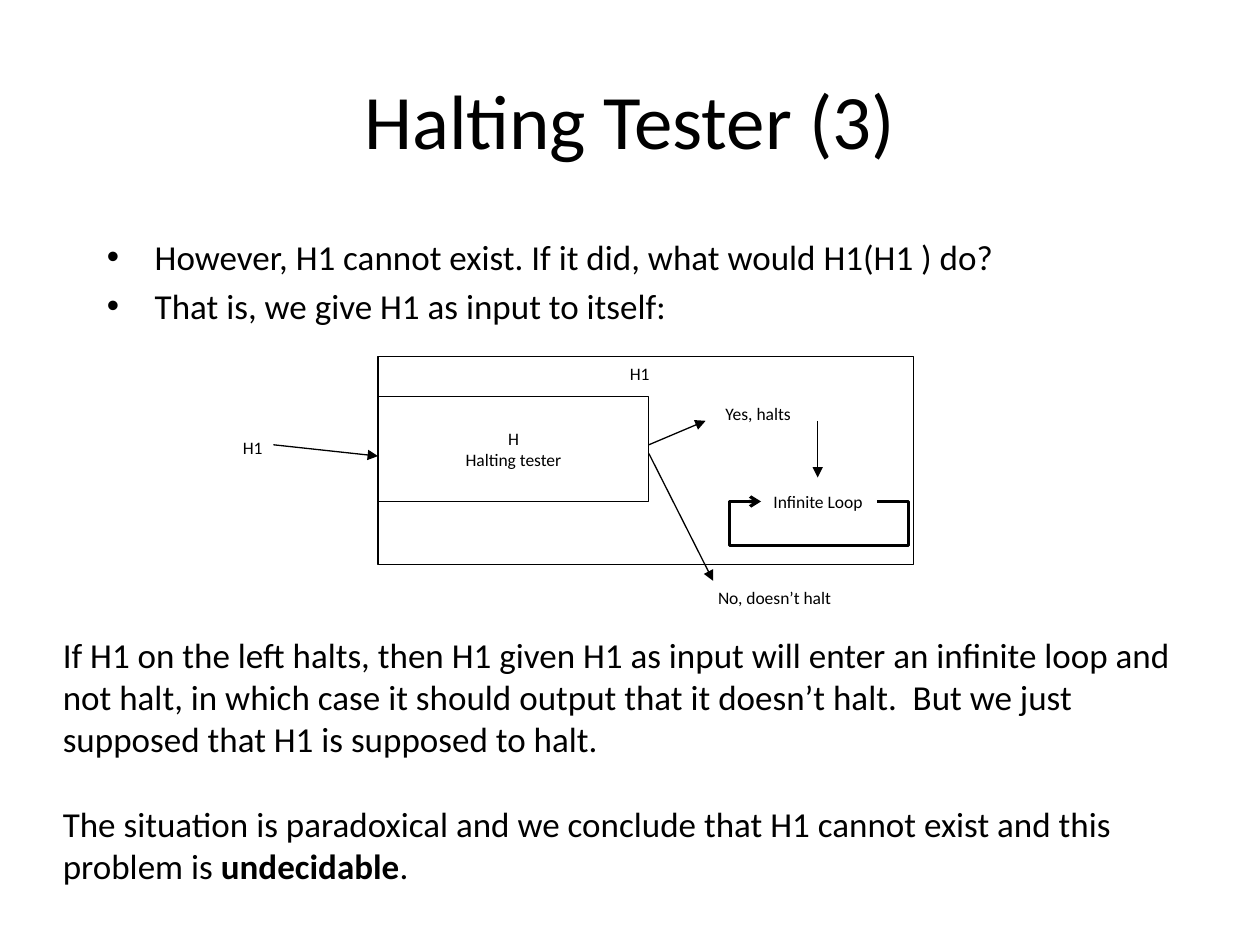
from lxml import etree
from pptx import Presentation
from pptx.dml.color import RGBColor
from pptx.enum.shapes import MSO_CONNECTOR, MSO_SHAPE
from pptx.enum.text import MSO_ANCHOR, PP_ALIGN
from pptx.oxml.ns import qn
from pptx.util import Inches, Pt

STRAIGHT = MSO_CONNECTOR.STRAIGHT
RECTANGLE = MSO_SHAPE.RECTANGLE
TOP, MIDDLE = MSO_ANCHOR.TOP, MSO_ANCHOR.MIDDLE
LEFT, CENTER = PP_ALIGN.LEFT, PP_ALIGN.CENTER
FONT, INK = "Calibri", "000000"
WIDTH, HEIGHT = 10, 7.5
MARGIN = 0.075 * WIDTH
CONTENT_W = WIDTH - 2 * MARGIN
BOX_X, TESTER_Y = 0.3 * WIDTH, 0.42 * HEIGHT
TESTER_RIGHT = BOX_X + 2.15
LABEL_H = 0.27


def color(hex_code):
    """Return the colour for a hex string."""
    return RGBColor.from_string(hex_code)


def write(tf, paragraphs, size=10, align=LEFT, anchor=TOP, wrap=True, bullet=False, before=0):
    """Fill a text frame; each paragraph is a list of (text, bold) runs."""
    tf.word_wrap, tf.vertical_anchor = wrap, anchor
    for i, runs in enumerate(paragraphs):
        p = tf.paragraphs[0] if i == 0 else tf.add_paragraph()
        p.alignment = align
        p.space_before = Pt(before if i or bullet else 0)
        if bullet:
            pPr = p._p.get_or_add_pPr()
            pPr.set("marL", str(Inches(0.38)))
            pPr.set("indent", str(-Inches(0.38)))
            etree.SubElement(pPr, qn("a:buFont")).set("typeface", "Arial")
            etree.SubElement(pPr, qn("a:buChar")).set("char", "•")
        for text, bold in runs:
            r = p.add_run()
            r.text = text
            r.font.name, r.font.size, r.font.bold = FONT, Pt(size), bold
            r.font.color.rgb = color(INK)


def plain(*lines):
    """Return one regular run for each line."""
    return [[(line, False)] for line in lines]


def add_text(s, x, y, w, h, paragraphs, **fmt):
    """Add a text box."""
    sp = s.shapes.add_textbox(Inches(x), Inches(y), Inches(w), Inches(h))
    write(sp.text_frame, paragraphs, **fmt)


def outline(sp, width, arrow=None):
    """Set a line's colour and width, and an arrowhead at its end."""
    sp.line.color.rgb = color(INK)
    sp.line.width = Pt(width)
    if arrow:
        etree.SubElement(sp.line._get_or_add_ln(), qn("a:tailEnd")).set("type", arrow)


def add_box(s, x, y, w, h):
    """Add an unfilled rectangle and return it."""
    sp = s.shapes.add_shape(RECTANGLE, Inches(x), Inches(y), Inches(w), Inches(h))
    sp.shadow.inherit = False
    sp.fill.background()
    outline(sp, 0.75)
    return sp


def add_arrow(s, x1, y1, x2, y2):
    """Add a straight arrow."""
    sp = s.shapes.add_connector(STRAIGHT, Inches(x1), Inches(y1), Inches(x2), Inches(y2))
    outline(sp, 0.75, "triangle")
    etree.SubElement(sp._element.spPr, qn("a:effectLst"))


def add_loop(s, points):
    """Add an open bent line that ends in an arrowhead."""
    start, *rest = [(Inches(x), Inches(y)) for x, y in points]
    builder = s.shapes.build_freeform(*start)
    builder.add_line_segments(rest, close=False)
    sp = builder.convert_to_shape()
    sp.shadow.inherit = False
    sp.fill.background()
    outline(sp, 1.75, "arrow")


def add_diagram(s):
    """Draw the tester H inside H1 with its two outcomes."""
    add_box(s, BOX_X, 2.83, 4.25, 1.65)
    tester = add_box(s, BOX_X, TESTER_Y, TESTER_RIGHT - BOX_X, 0.83)
    write(tester.text_frame, plain("H", "Halting tester"), align=CENTER, anchor=MIDDLE, wrap=False)
    for text, x, y, w in (
        ("H1", 1.83, 3.42, 0.36),
        ("H1", 4.9, 2.83, 0.36),
        ("Yes, halts", 5.66, TESTER_Y, 0.73),
        ("No, doesn’t halt", 5.6, 4.61, 1.11),
        ("Infinite Loop", 6.04, 3.85, 0.92),
    ):
        add_text(s, x, y, w, LABEL_H, plain(text), wrap=False)
    for ends in (
        (2.17, 3.53, BOX_X, 3.62),
        (TESTER_RIGHT, 3.53, 5.6, 3.34),
        (TESTER_RIGHT, 3.6, 5.66, 4.61),
        (6.49, 3.34, 6.49, 3.79),
    ):
        add_arrow(s, *ends)
    add_loop(s, [(6.96, 3.98), (7.21, 3.98), (7.21, 4.33), (5.79, 4.33), (5.79, 3.98), (6.04, 3.98)])


def main():
    """Build the slide and save it."""
    prs = Presentation()
    prs.slide_width, prs.slide_height = Inches(WIDTH), Inches(HEIGHT)
    s = prs.slides.add_slide(prs.slide_layouts[6])
    add_text(s, MARGIN, 0.32, CONTENT_W, 1.25, plain("Halting Tester (3)"),
             size=44, align=CENTER, anchor=MIDDLE)
    add_text(s, MARGIN, 1.82, CONTENT_W, 4.5,
             plain("However, H1 cannot exist. If it did, what would H1(H1 ) do?",
                   "That is, we give H1 as input to itself:"),
             size=20, bullet=True, before=4)
    conclusion = plain(
        "If H1 on the left halts, then H1 given H1 as input will enter an infinite loop and "
        "not halt, in which case it should output that it doesn’t halt.  But we just "
        "supposed that H1 is supposed to halt.")
    conclusion.append([
        ("The situation is paradoxical and we conclude that H1 cannot exist and this problem is ", False),
        ("undecidable", True), (".", False)])
    add_text(s, 0.04 * WIDTH, 4.98, 9.02, 2.12, conclusion, size=20, before=24.4)
    add_diagram(s)
    prs.save("out.pptx")


if __name__ == "__main__":
    main()
